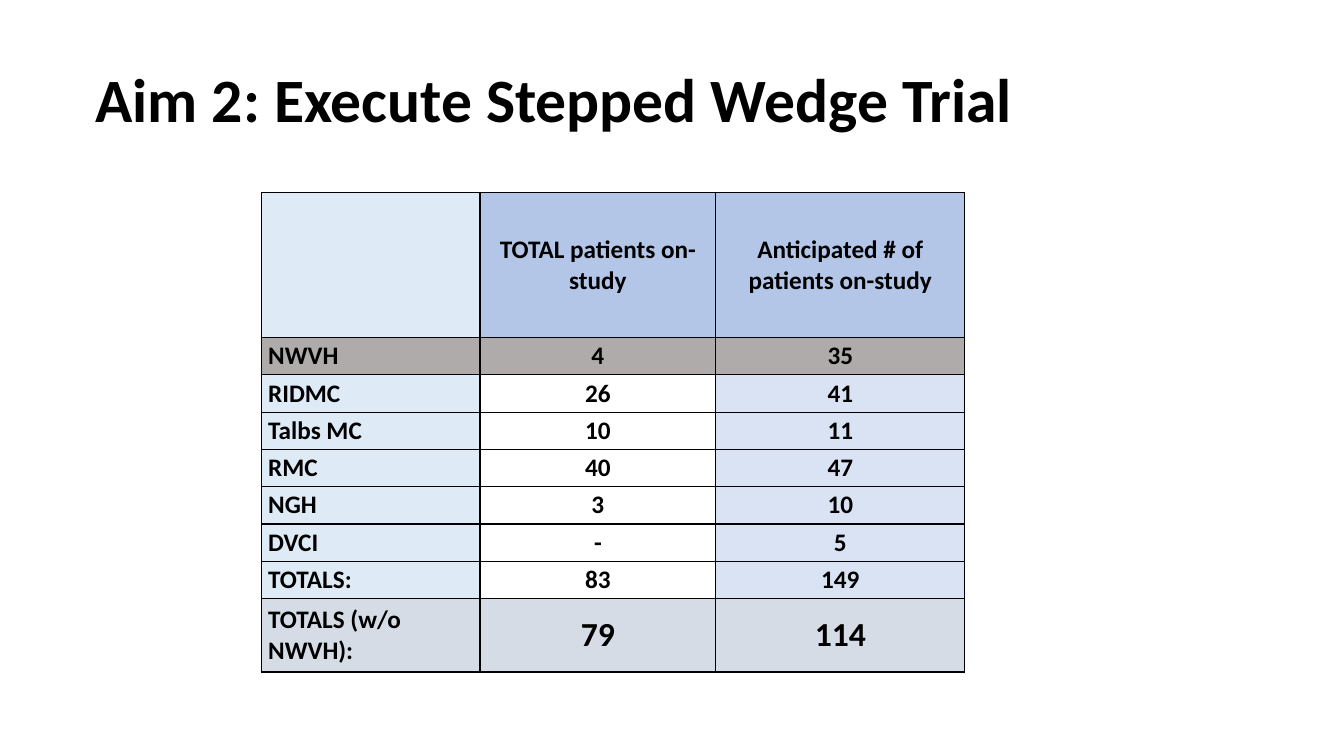
import pptx
import pptx.util
import pptx.dml.color
import pptx.enum.text
import pptx.oxml
import pptx.oxml.ns

FONT = "Calibri"
COLUMNS = [2.17, 2.34, 2.47]
ROWS = [1.44] + [0.37] * 7 + [0.73]
PATIENTS = [
    ("", "TOTAL patients on-study", "Anticipated # of patients on-study"),
    ("NWVH", "4", "35"),
    ("RIDMC", "26", "41"),
    ("Talbs MC", "10", "11"),
    ("RMC", "40", "47"),
    ("NGH", "3", "10"),
    ("DVCI", "-", "5"),
    ("TOTALS:", "83", "149"),
    ("TOTALS (w/o NWVH):", "79", "114"),
]
HEADER_FILLS = ("DEEAF6", "B4C6E7", "B4C6E7")
SITE_FILLS = ("DEEAF6", "FFFFFF", "DAE3F3")
EXCLUDED_FILLS = ("AFABAB",) * 3
TOTAL_FILLS = ("DEEBF7", "FFFFFF", "DAE3F3")
NET_FILLS = ("D6DCE5",) * 3
FILLS = [HEADER_FILLS, EXCLUDED_FILLS] + [SITE_FILLS] * 5 + [TOTAL_FILLS, NET_FILLS]


def rgb(value):
    return pptx.dml.color.RGBColor.from_string(value)


def inches(value):
    return pptx.util.Inches(value)


def format_text(p, size):
    for r in p.runs:
        r.font.name = FONT
        r.font.size = pptx.util.Pt(size)
        r.font.bold = True
        r.font.color.rgb = rgb("000000")


def add_title(s, text, left, top, width, height):
    box = s.shapes.add_textbox(inches(left), inches(top), inches(width), inches(height))
    tf = box.text_frame
    tf.word_wrap = True
    tf.vertical_anchor = pptx.enum.text.MSO_ANCHOR.MIDDLE
    tf.text = text
    p = tf.paragraphs[0]
    p.line_spacing = 0.9
    format_text(p, 44)


def add_borders(cell):
    tcPr = cell._tc.get_or_add_tcPr()
    for i, side in enumerate(("lnL", "lnR", "lnT", "lnB")):
        line = pptx.oxml.parse_xml(
            f'<a:{side} {pptx.oxml.ns.nsdecls("a")} w="12700">'
            '<a:solidFill><a:srgbClr val="000000"/></a:solidFill>'
            f'</a:{side}>'
        )
        tcPr.insert(i, line)


def fill_cell(cell, text, fill, size, centred):
    cell.text = text
    cell.vertical_anchor = pptx.enum.text.MSO_ANCHOR.MIDDLE
    cell.margin_left = cell.margin_right = inches(0.07)
    cell.margin_top = cell.margin_bottom = 0
    p = cell.text_frame.paragraphs[0]
    align = pptx.enum.text.PP_ALIGN
    p.alignment = align.CENTER if centred else align.LEFT
    format_text(p, size)
    cell.fill.solid()
    cell.fill.fore_color.rgb = rgb(fill)
    add_borders(cell)


def add_patient_table(s, left, top):
    frame = s.shapes.add_table(
        len(ROWS), len(COLUMNS), inches(left), inches(top),
        inches(sum(COLUMNS)), inches(sum(ROWS)),
    )
    table = frame.table
    for column, width in zip(table.columns, COLUMNS):
        column.width = inches(width)
    for row, height in zip(table.rows, ROWS):
        row.height = inches(height)
    last = len(ROWS) - 1
    for i, (texts, fills) in enumerate(zip(PATIENTS, FILLS)):
        for j, (text, fill) in enumerate(zip(texts, fills)):
            size = 24 if i == last and j > 0 else 18
            fill_cell(table.cell(i, j), text, fill, size, j > 0)


def main():
    prs = pptx.Presentation()
    prs.slide_width = inches(13.33)
    prs.slide_height = inches(7.5)
    s = prs.slides.add_slide(prs.slide_layouts[6])
    add_title(s, "Aim 2: Execute Stepped Wedge Trial", 0.85, 0.29, 11.5, 1.45)
    add_patient_table(s, 2.59, 1.91)
    prs.save("out.pptx")


if __name__ == "__main__":
    main()
